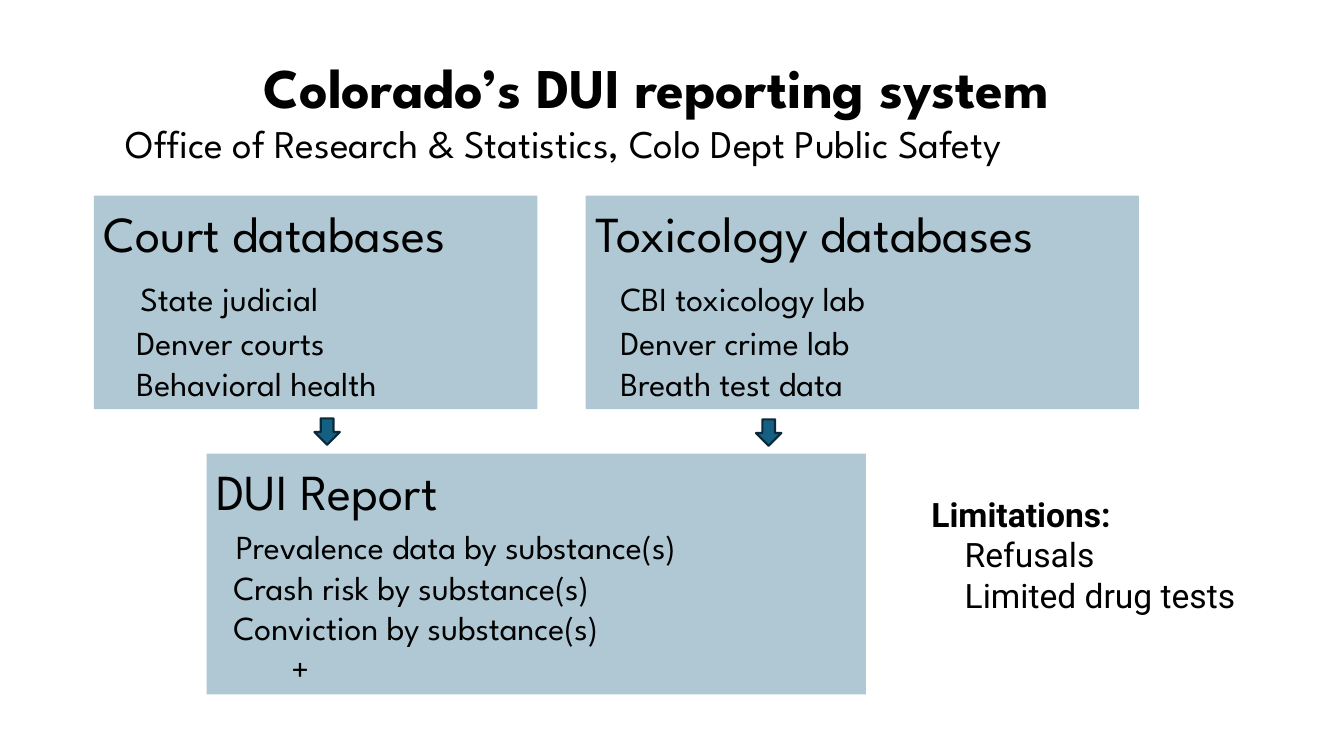
"""Builds the slide on Colorado's DUI reporting system."""
from lxml.etree import SubElement
from pptx import Presentation
from pptx.dml.color import RGBColor
from pptx.enum.shapes import MSO_SHAPE
from pptx.enum.text import MSO_ANCHOR, MSO_AUTO_SIZE, PP_ALIGN
from pptx.oxml.ns import qn
from pptx.util import Pt

BLACK = RGBColor(0x00, 0x00, 0x00)
TEAL = RGBColor(0x15, 0x60, 0x82)
DARK_TEAL = RGBColor(0x09, 0x2A, 0x39)
HEADING_FONT = "League Spartan"
LIST_FONT = "Roboto"


def place(shape, left, top, width, height):
    """Move and size a shape, in points."""
    shape.left, shape.top = Pt(left), Pt(top)
    shape.width, shape.height = Pt(width), Pt(height)


def prepare_frame(shape, lines, anchor):
    """Fill a shape with one paragraph per line and return the paragraphs."""
    frame = shape.text_frame
    frame.text = "\n".join(lines)
    frame.word_wrap = True
    frame.auto_size = MSO_AUTO_SIZE.NONE
    frame.vertical_anchor = anchor
    return frame.paragraphs


def format_paragraph(para, size, font=HEADING_FONT, bold=False,
                     align=PP_ALIGN.LEFT, indent=0, before=0, after=0):
    """Set the spacing, indent and type of one paragraph."""
    para.alignment = align
    para.line_spacing = 1.0
    para.space_before, para.space_after = Pt(before), Pt(after)
    properties = para._p.get_or_add_pPr()
    properties.set("marL", str(Pt(indent)))
    properties.set("indent", "0")
    SubElement(properties, qn("a:buNone"))
    for span in para.runs:
        span.font.name = font
        span.font.size = Pt(size)
        span.font.bold = bold
        span.font.color.rgb = BLACK


def add_panel(page, bounds, heading, items, indents, gaps):
    """Add a translucent panel with a heading and indented items."""
    panel = page.shapes.add_shape(MSO_SHAPE.RECTANGLE, 0, 0, 0, 0)
    place(panel, *bounds)
    panel.shadow.inherit = False
    panel.fill.solid()
    panel.fill.fore_color.rgb = TEAL
    color = panel.fill._xPr.find(qn("a:solidFill"))[0]
    SubElement(color, qn("a:alpha")).set("val", "34000")
    panel.line.fill.background()
    paras = prepare_frame(panel, [heading, *items], MSO_ANCHOR.MIDDLE)
    format_paragraph(paras[0], 36)
    for para, indent in zip(paras[1:], indents):
        format_paragraph(para, 24, indent=indent)
    before, after = gaps
    paras[1].space_before, paras[1].space_after = Pt(before), Pt(after)


def add_down_arrow(page, left, top):
    """Add a small outlined block arrow pointing down."""
    arrow = page.shapes.add_shape(MSO_SHAPE.DOWN_ARROW, 0, 0, 0, 0)
    place(arrow, left, top, 18.2, 18.9)
    arrow.shadow.inherit = False
    arrow.fill.solid()
    arrow.fill.fore_color.rgb = TEAL
    arrow.line.color.rgb = DARK_TEAL
    arrow.line.width = Pt(1.5)


def fill_title(title):
    """Write the centred title and the line below it."""
    place(title, 82.8, 33.8, 771.8, 90)
    heading, office = prepare_frame(title, [
        "Colorado’s DUI reporting system",
        "Office of Research & Statistics, Colo Dept Public Safety",
    ], MSO_ANCHOR.TOP)
    format_paragraph(heading, 40, bold=True, align=PP_ALIGN.CENTER)
    format_paragraph(office, 28)


def fill_limitations(body):
    """Write the list of limitations."""
    place(body, 658.1, 349.2, 241.9, 123.8)
    heading, *items = prepare_frame(
        body, ["Limitations:", "Refusals", "Limited drug tests"], MSO_ANCHOR.TOP)
    format_paragraph(heading, 24, LIST_FONT, bold=True)
    for item in items:
        format_paragraph(item, 24, LIST_FONT, indent=23.8)


def main():
    """Build and save the deck."""
    deck = Presentation()
    deck.slide_width, deck.slide_height = Pt(960), Pt(540)
    page = deck.slides.add_slide(deck.slide_layouts[1])
    fill_title(page.shapes.title)
    fill_limitations(page.placeholders[1])
    add_panel(page, (67, 139.7, 316.8, 152.6), "Court databases",
              ["State judicial", "Denver courts", "Behavioral health"],
              [26.2, 23.4, 23.4], (10.8, 3))
    add_panel(page, (418.3, 139.7, 395.3, 152.6), "Toxicology databases",
              ["CBI toxicology lab", "Denver crime lab", "Breath test data"],
              [17.7, 17.7, 17.7], (10.8, 3))
    add_panel(page, (147.6, 324, 470.9, 172.1), "DUI Report",
              ["Prevalence data by substance(s)", "Crash risk by substance(s)",
               "Conviction by substance(s)", "+"],
              [13.9, 12, 12, 53.5], (3.8, 0.5))
    add_down_arrow(page, 224.6, 298.8)
    add_down_arrow(page, 540, 299.5)
    deck.save("out.pptx")


if __name__ == "__main__":
    main()
